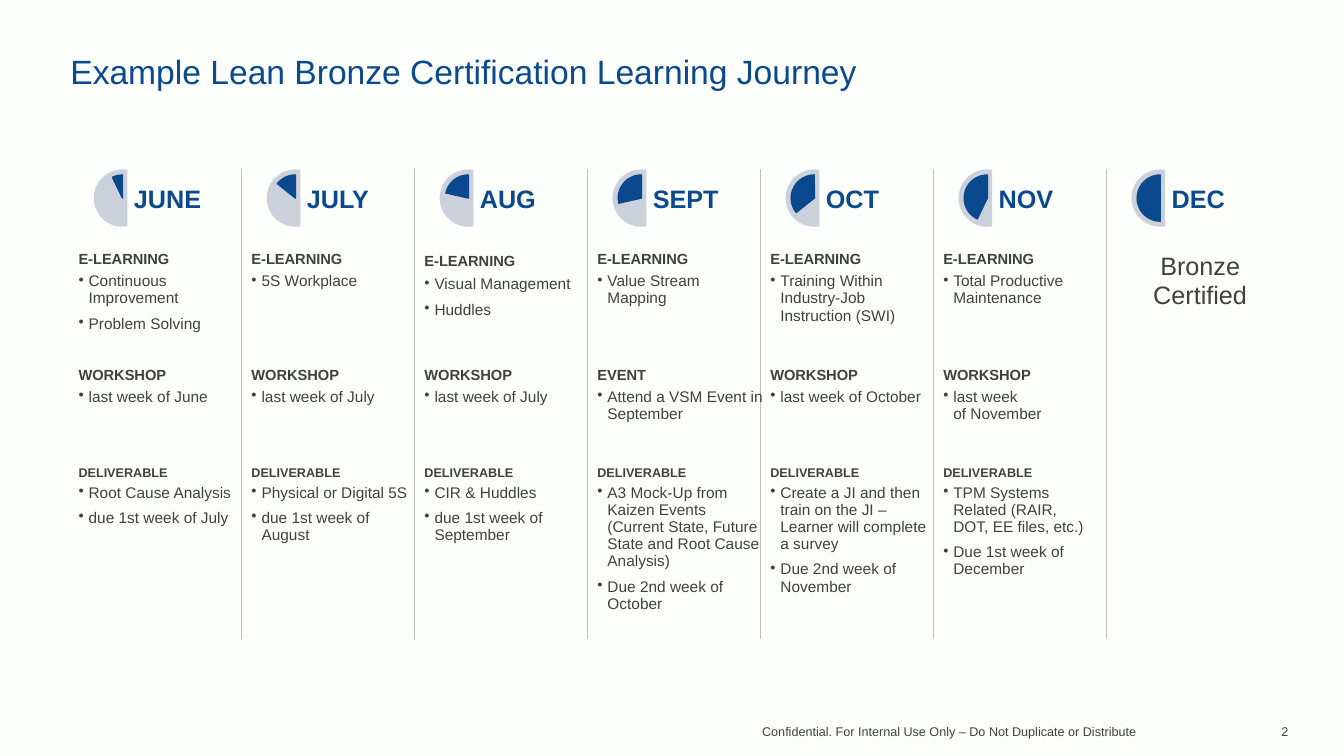
from copy import deepcopy
from dataclasses import dataclass
from typing import Any

from lxml.etree import SubElement
from pptx import Presentation
from pptx.dml.color import RGBColor
from pptx.enum.shapes import MSO_CONNECTOR, MSO_SHAPE
from pptx.enum.text import MSO_ANCHOR, PP_ALIGN
from pptx.oxml.ns import qn
from pptx.util import Pt

BACKGROUND = RGBColor(0xFD, 0xFF, 0xFD)
BLUE = RGBColor(0x0A, 0x49, 0x8E)
PALE = RGBColor(0xCC, 0xD0, 0xDB)
TEXT_GREY = RGBColor(0x3F, 0x40, 0x3F)
FOOTER_GREY = RGBColor(0x40, 0x40, 0x40)
RULE_GREY = RGBColor(0xBF, 0xBF, 0xBF)

TABLE_LEFT, TABLE_TOP = 52.5, 116
COLUMN_WIDTH = 123.55
ROW_HEIGHTS = (54, 24.5, 70.5, 29.5)
DIAL_TOP, DIAL_SIZE, DIAL_INSET = 121, 41, 4
RULE_BOTTOM = 456.5
NO_GRID_STYLE = "{2D5ABB26-0587-4C30-8999-92F81FD0307C}"

MONTH_CELL = {"margin_left": Pt(43.2), "margin_right": 0, "margin_top": Pt(3.6),
              "margin_bottom": Pt(3.6), "vertical_anchor": MSO_ANCHOR.MIDDLE}
SECTION_CELL = {"margin_left": Pt(3.6), "margin_right": 0, "margin_top": Pt(10.8),
                "margin_bottom": Pt(10.8)}
TITLE_FRAME = {"word_wrap": True, "vertical_anchor": MSO_ANCHOR.BOTTOM}
FOOTER_FRAME = {**TITLE_FRAME, "margin_left": 0, "margin_right": 0}


@dataclass
class Section:
    heading: str
    bullets: tuple[str, ...]
    heading_size: float = 10.5
    tall_heading: bool = False


@dataclass
class Month:
    name: str
    sections: tuple[Section, ...] = ()


@dataclass
class Label:
    text: str
    box: tuple[float, float, float, float]
    size: float
    color: RGBColor
    frame: dict[str, Any]
    paragraph: dict[str, Any]


def learning(*bullets: str, tall: bool = False) -> Section:
    return Section("E-LEARNING", bullets, tall_heading=tall)


def workshop(when: str) -> Section:
    return Section("WORKSHOP", (when,))


def deliverable(*bullets: str) -> Section:
    return Section("DELIVERABLE", bullets, 9)


MONTHS = (
    Month("JUNE", (learning("Continuous Improvement", "Problem Solving"),
                   workshop("last week of June"),
                   deliverable("Root Cause Analysis", "due 1st week of July"))),
    Month("JULY", (learning("5S Workplace"),
                   workshop("last week of July"),
                   deliverable("Physical or Digital 5S", "due 1st week of August"))),
    Month("AUG", (learning("Visual Management", "Huddles", tall=True),
                  workshop("last week of July"),
                  deliverable("CIR & Huddles", "due 1st week of September"))),
    Month("SEPT", (learning("Value Stream\nMapping"),
                   Section("EVENT", ("Attend a VSM Event in September",)),
                   deliverable("A3 Mock-Up from Kaizen Events (Current State, "
                               "Future State and Root Cause Analysis)",
                               "Due 2nd week of October"))),
    Month("OCT", (learning("Training Within Industry-Job Instruction (SWI)"),
                  workshop("last week of October"),
                  deliverable("Create a JI and then train on the JI – "
                              "Learner will complete a survey",
                              "Due 2nd week of November"))),
    Month("NOV", (learning("Total Productive Maintenance"),
                  workshop("last week\nof November"),
                  deliverable("TPM Systems\nRelated (RAIR,\nDOT, EE files, etc.)",
                              "Due 1st week of December"))),
    Month("DEC"),
)

LABELS = (
    Label("Example Lean Bronze Certification Learning Journey", (43.2, 36, 874.8, 33),
          24, BLUE, TITLE_FRAME, {"line_spacing": 0.9}),
    Label("Confidential. For Internal Use Only – Do Not Duplicate or Distribute",
          (535, 513.4, 276.5, 18), 9, FOOTER_GREY, FOOTER_FRAME,
          {"alignment": PP_ALIGN.RIGHT}),
    Label("2", (877, 513.4, 43.2, 18), 9, FOOTER_GREY, FOOTER_FRAME,
          {"alignment": PP_ALIGN.RIGHT}),
)


def apply(target: Any, formats: dict[str, Any]) -> None:
    for attribute, value in formats.items():
        setattr(target, attribute, value)


def write(paragraph: Any, text: str, size: float, color: RGBColor,
          bold: bool = False) -> None:
    paragraph.text = text
    for run in paragraph.runs:
        apply(run.font, {"name": "Arial", "size": Pt(size), "bold": bold})
        run.font.color.rgb = color
    # Line breaks take the size of the text around them
    for line_break in paragraph._p.findall(qn("a:br")):
        line_break.insert(0, deepcopy(paragraph.runs[0]._r.rPr))


def draw_label(slide: Any, label: Label) -> None:
    frame = slide.shapes.add_textbox(*map(Pt, label.box)).text_frame
    apply(frame, label.frame)
    apply(frame.paragraphs[0], label.paragraph)
    write(frame.paragraphs[0], label.text, label.size, label.color)


def draw_rule(slide: Any, x: float) -> None:
    rule = slide.shapes.add_connector(MSO_CONNECTOR.STRAIGHT, Pt(x), Pt(DIAL_TOP),
                                      Pt(x), Pt(RULE_BOTTOM))
    rule.line.color.rgb = RULE_GREY
    rule.line.width = Pt(0.5)
    SubElement(rule._element.spPr, qn("a:effectLst"))


def draw_dial(slide: Any, index: int) -> None:
    left = TABLE_LEFT + index * COLUMN_WIDTH + 14.5
    start = 162 - (index + 1) * 108 / len(MONTHS)
    for kind, inset, angles, color in (
            (MSO_SHAPE.CHORD, 0, (48, 168), PALE),
            (MSO_SHAPE.PIE, DIAL_INSET, (start, 162), BLUE)):
        size = Pt(DIAL_SIZE - 2 * inset)
        part = slide.shapes.add_shape(kind, Pt(left + inset), Pt(DIAL_TOP + inset),
                                      size, size)
        part.adjustments[0], part.adjustments[1] = angles
        part.shadow.inherit = False
        part.fill.solid()
        part.fill.fore_color.rgb = color
        if inset:
            part.line.color.rgb = color
            part.line.width = Pt(1)
        else:
            part.line.fill.background()


def fill_section(cell: Any, section: Section) -> None:
    heading = cell.text_frame.paragraphs[0]
    apply(heading, {"line_spacing": 0.9, "space_after": Pt(0)})
    # Space after the heading is a share of its font size
    space_after = heading._p.pPr.find(qn("a:spcAft"))
    space_after.clear()
    SubElement(space_after, qn("a:spcPct"), val="35000")
    write(heading, section.heading, section.heading_size, TEXT_GREY, True)
    if section.tall_heading:
        spacer = heading.add_run()
        spacer.text = " "
        apply(spacer.font, {"name": "Arial", "size": Pt(12)})
    for text in section.bullets:
        item = cell.text_frame.add_paragraph()
        apply(item, {"level": 1, "space_after": Pt(6)})
        properties = item._p.get_or_add_pPr()
        properties.set("marL", str(Pt(7.2)))
        properties.set("indent", str(Pt(-7.2)))
        SubElement(properties, qn("a:buChar"), char="•")
        write(item, text, 11, TEXT_GREY)


def draw_journey(slide: Any) -> None:
    table = slide.shapes.add_table(
        len(ROW_HEIGHTS), len(MONTHS), Pt(TABLE_LEFT), Pt(TABLE_TOP),
        Pt(COLUMN_WIDTH * len(MONTHS)), Pt(sum(ROW_HEIGHTS))).table
    apply(table, {"first_row": False, "horz_banding": False})
    table._tbl.tblPr.find(qn("a:tableStyleId")).text = NO_GRID_STYLE
    for row, height in zip(table.rows, ROW_HEIGHTS):
        row.height = Pt(height)
    for cell in table.iter_cells():
        cell.fill.background()
        apply(cell, SECTION_CELL)
    for column, month in enumerate(MONTHS):
        table.columns[column].width = Pt(COLUMN_WIDTH)
        month_cell = table.cell(0, column)
        apply(month_cell, MONTH_CELL)
        write(month_cell.text_frame.paragraphs[0], month.name, 18, BLUE, True)
        for row, section in enumerate(month.sections, 1):
            fill_section(table.cell(row, column), section)
    certified = table.cell(1, len(MONTHS) - 1).text_frame.paragraphs[0]
    certified.alignment = PP_ALIGN.CENTER
    write(certified, "Bronze Certified", 18, TEXT_GREY)


def main() -> None:
    deck = Presentation()
    apply(deck, {"slide_width": Pt(960), "slide_height": Pt(540)})
    slide = deck.slides.add_slide(deck.slide_layouts[6])
    slide.background.fill.solid()
    slide.background.fill.fore_color.rgb = BACKGROUND
    # Rules between the months
    for index in range(1, len(MONTHS)):
        draw_rule(slide, TABLE_LEFT + index * COLUMN_WIDTH - 3.5)
    # Title, footer and page number
    for label in LABELS:
        draw_label(slide, label)
    # Month table with progress dials on top
    draw_journey(slide)
    for index in range(len(MONTHS)):
        draw_dial(slide, index)
    deck.save("out.pptx")


if __name__ == "__main__":
    main()
